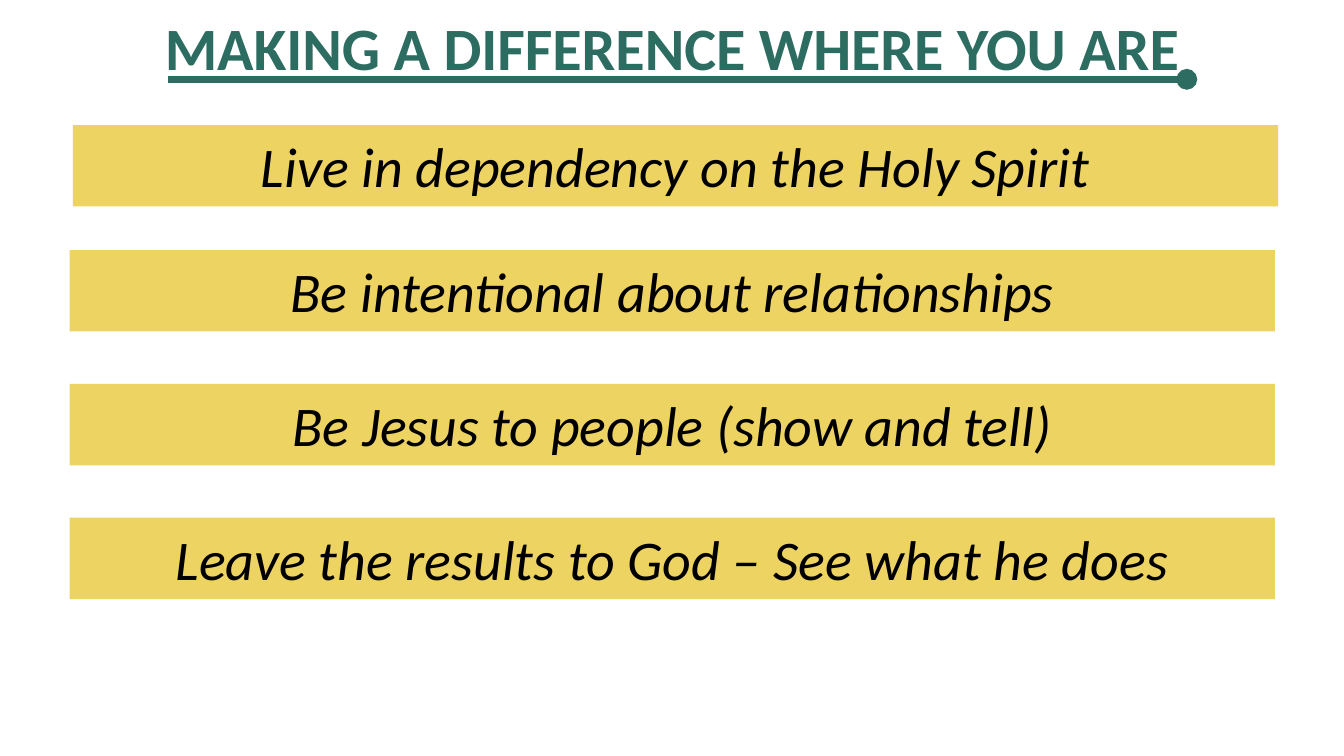
from dataclasses import dataclass

from lxml.etree import SubElement
from pptx import Presentation
from pptx.dml.color import RGBColor
from pptx.enum.shapes import MSO_CONNECTOR, MSO_SHAPE
from pptx.enum.text import MSO_ANCHOR, MSO_AUTO_SIZE, PP_ALIGN
from pptx.oxml.ns import qn
from pptx.util import Pt


@dataclass(frozen=True)
class Theme:
    green: RGBColor = RGBColor(0x2D, 0x6D, 0x61)
    gold: RGBColor = RGBColor(0xE5, 0xBD, 0x12)
    black: RGBColor = RGBColor(0, 0, 0)
    font: str = "Calibri"
    title_size: float = 32.2
    bar_size: float = 30


theme = Theme()


def write_centred(tf, text, size, color, **style):
    p = tf.paragraphs[0]
    p.alignment = PP_ALIGN.CENTER
    r = p.add_run()
    r.text = text
    r.font.color.rgb = color
    for name, value in {"name": theme.font, "size": Pt(size), **style}.items():
        setattr(r.font, name, value)
    return p


prs = Presentation()
prs.slide_width, prs.slide_height = Pt(720), Pt(405)
s = prs.slides.add_slide(prs.slide_layouts[5])

# Title
title = s.shapes.title
for name, value in {"left": 0, "top": 1.4, "width": 720, "height": 51.8}.items():
    setattr(title, name, Pt(value))
tf = title.text_frame
tf.vertical_anchor = MSO_ANCHOR.MIDDLE
tf.auto_size = MSO_AUTO_SIZE.NONE
p = write_centred(tf, "MAKING A DIFFERENCE WHERE YOU ARE",
                  theme.title_size, theme.green, bold=True)
p.line_spacing = 0.9

# Underline with a round end
rule = s.shapes.add_connector(MSO_CONNECTOR.STRAIGHT,
                              Pt(90), Pt(42.5), Pt(635.8), Pt(42.5))
rule.line.color.rgb = theme.green
rule.line.width = Pt(3.75)
SubElement(rule.line._get_or_add_ln(), qn("a:tailEnd"), type="oval")
SubElement(rule._element.spPr, qn("a:effectLst"))

# Action bars
bars = [
    (39, 67, "Live in dependency on the Holy Spirit"),
    (37.3, 134, "Be intentional about relationships"),
    (37.3, 205.7, "Be Jesus to people (show and tell)"),
    (37.3, 277.4, "Leave the results to God – See what he does"),
]
for left, top, text in bars:
    bar = s.shapes.add_shape(MSO_SHAPE.RECTANGLE,
                             Pt(left), Pt(top), Pt(645.7), Pt(43.6))
    bar.shadow.inherit = False
    bar.line.fill.background()
    bar.fill.solid()
    bar.fill.fore_color.rgb = theme.gold
    color = bar._element.spPr.find(qn("a:solidFill"))[0]
    SubElement(color, qn("a:alpha"), val="66000")
    tf = bar.text_frame
    tf.word_wrap = True
    tf.auto_size = MSO_AUTO_SIZE.SHAPE_TO_FIT_TEXT
    tf.vertical_anchor = MSO_ANCHOR.TOP
    write_centred(tf, text, theme.bar_size, theme.black, italic=True)

prs.save("out.pptx")
